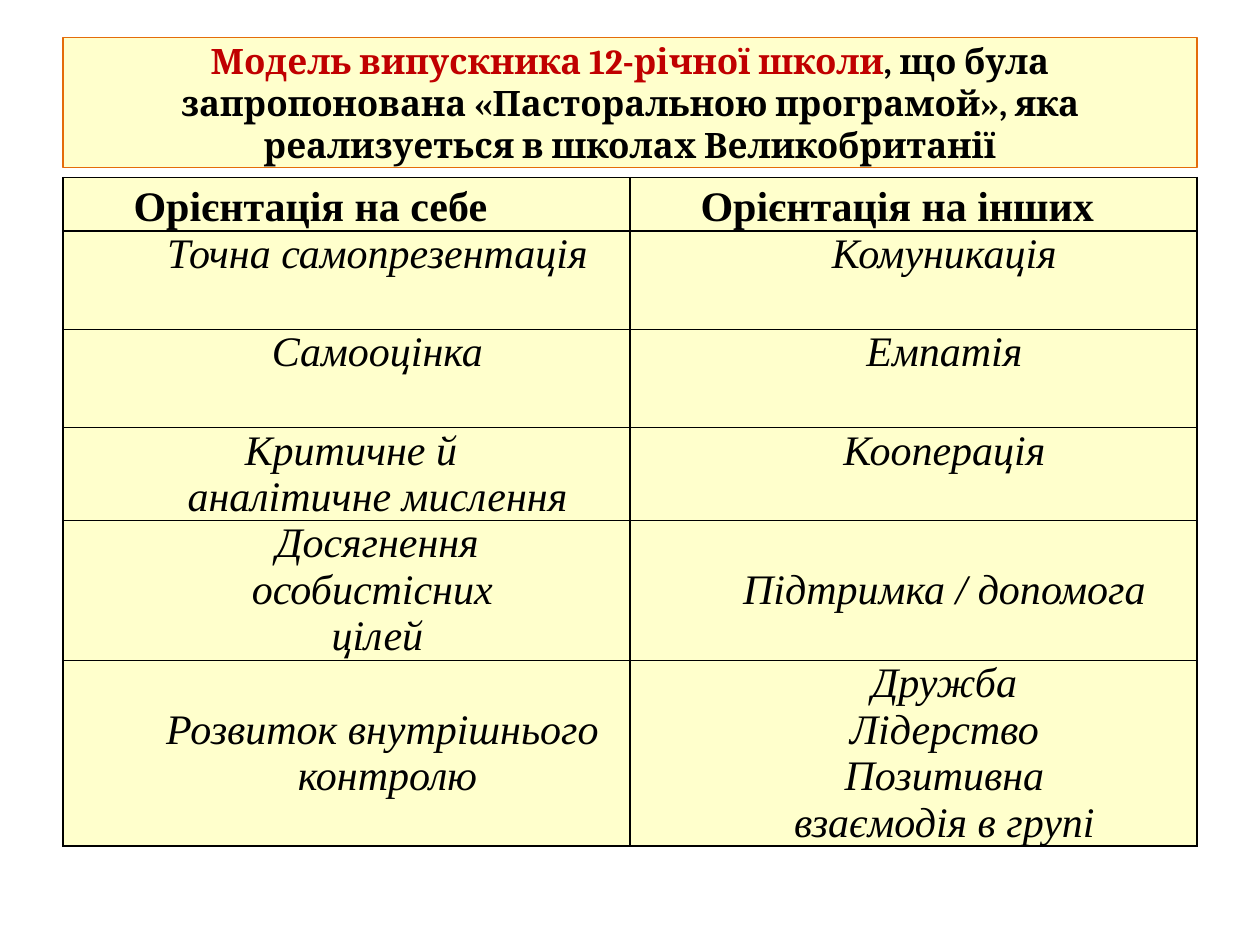
from dataclasses import dataclass

from lxml.etree import SubElement
from pptx import Presentation
from pptx.dml.color import RGBColor
from pptx.enum.shapes import MSO_SHAPE
from pptx.enum.text import MSO_ANCHOR, PP_ALIGN
from pptx.oxml.ns import qn
from pptx.util import Inches, Pt


@dataclass(frozen=True)
class Theme:
    """Colours, fonts and sizes of the slide."""
    cream: str = "FFFFCC"
    black: str = "000000"
    red: str = "C00000"
    edge: str = "E46C0A"
    head: str = "Cambria"
    body: str = "Times New Roman"
    big: int = 24
    mid: int = 20
    rule: int = 1
    indent: float = 0.49


THEME = Theme()
WIDE, HIGH = 10, 7.5
LEFT, SPAN = 0.05 * WIDE, 0.9 * WIDE
TITLE = [
    ("Модель випускника 12-річної школи", THEME.red),
    (", що була запропонована «Пасторальною програмой», яка "
     "реализуеться в школах Великобританії", THEME.black),
]
ROWS = [
    (0.42, "Орієнтація на себе", "Орієнтація на інших"),
    (0.78, "Точна самопрезентація", "Комуникація"),
    (0.78, "Самооцінка", "Емпатія"),
    (0.73, "Критичне й\nаналітичне мислення", "Кооперація"),
    (1.11, "Досягнення\nособистісних\nцілей", "Підтримка / допомога"),
    (1.47, "Розвиток внутрішнього\nконтролю",
     "Дружба\nЛідерство\nПозитивна\nвзаємодія в групі"),
]
SHIFTS = {"Критичне й": -0.42, "особистісних": -0.08,
          "Розвиток внутрішнього": 0.08, "контролю": 0.16}
MIDDLE = {(4, 1), (5, 0)}


def style(run, font, size, color, bold=False, italic=False):
    """Format one run of text."""
    run.font.name, run.font.size = font, Pt(size)
    run.font.bold, run.font.italic = bold, italic
    run.font.color.rgb = RGBColor.from_string(color)


def paint(item, color):
    """Give a shape or cell a solid fill."""
    item.fill.solid()
    item.fill.fore_color.rgb = RGBColor.from_string(color)


def add_title(slide):
    """Draw the framed two-colour heading."""
    box = slide.shapes.add_shape(
        MSO_SHAPE.RECTANGLE, Inches(LEFT), Inches(0.04 * HIGH),
        Inches(SPAN), Inches(1.03))
    box.shadow.inherit = False
    paint(box, THEME.cream)
    box.line.color.rgb = RGBColor.from_string(THEME.edge)
    box.line.width = Pt(0.75)
    frame = box.text_frame
    frame.word_wrap = True
    frame.vertical_anchor = MSO_ANCHOR.MIDDLE
    para = frame.paragraphs[0]
    para.alignment = PP_ALIGN.CENTER
    for text, color in TITLE:
        run = para.add_run()
        run.text = text
        style(run, THEME.head, THEME.mid, color, bold=True)


def frame_cell(cell):
    """Rule all four sides of a cell."""
    props = cell._tc.get_or_add_tcPr()
    for place, side in enumerate(("a:lnL", "a:lnR", "a:lnT", "a:lnB")):
        line = SubElement(props, qn(side), w=str(Pt(THEME.rule)))
        fill = SubElement(line, qn("a:solidFill"))
        SubElement(fill, qn("a:srgbClr"), val=THEME.black)
        props.insert(place, line)


def fill_cell(cell, text, head, middle):
    """Write and format one table cell."""
    paint(cell, THEME.cream)
    frame_cell(cell)
    cell.margin_left = cell.margin_right = Inches(0.07)
    cell.margin_top = cell.margin_bottom = 0
    cell.vertical_anchor = MSO_ANCHOR.MIDDLE if middle else MSO_ANCHOR.TOP
    cell.text_frame.text = text
    for para in cell.text_frame.paragraphs:
        para.alignment = PP_ALIGN.JUSTIFY if head else PP_ALIGN.CENTER
        if head:
            para.line_spacing = 1.15
        indent = THEME.indent + SHIFTS.get(para.text, 0)
        props = para._p.get_or_add_pPr()
        props.set("marL", "0")
        props.set("indent", str(Inches(indent)))
        style(para.runs[0], THEME.body, THEME.big, THEME.black,
              bold=head, italic=not head)


def add_grid(slide):
    """Draw the two-column table of qualities."""
    total = sum(row[0] for row in ROWS)
    table = slide.shapes.add_table(
        len(ROWS), 2, Inches(LEFT), Inches(1.41),
        Inches(SPAN), Inches(total)).table
    table.first_row = table.horz_banding = False
    for r, (height, *texts) in enumerate(ROWS):
        table.rows[r].height = Inches(height)
        for c, text in enumerate(texts):
            fill_cell(table.cell(r, c), text, r == 0, (r, c) in MIDDLE)


def main():
    """Build and save the slide."""
    deck = Presentation()
    deck.slide_width, deck.slide_height = Inches(WIDE), Inches(HIGH)
    slide = deck.slides.add_slide(deck.slide_layouts[6])
    add_title(slide)
    add_grid(slide)
    deck.save("out.pptx")


if __name__ == "__main__":
    main()
